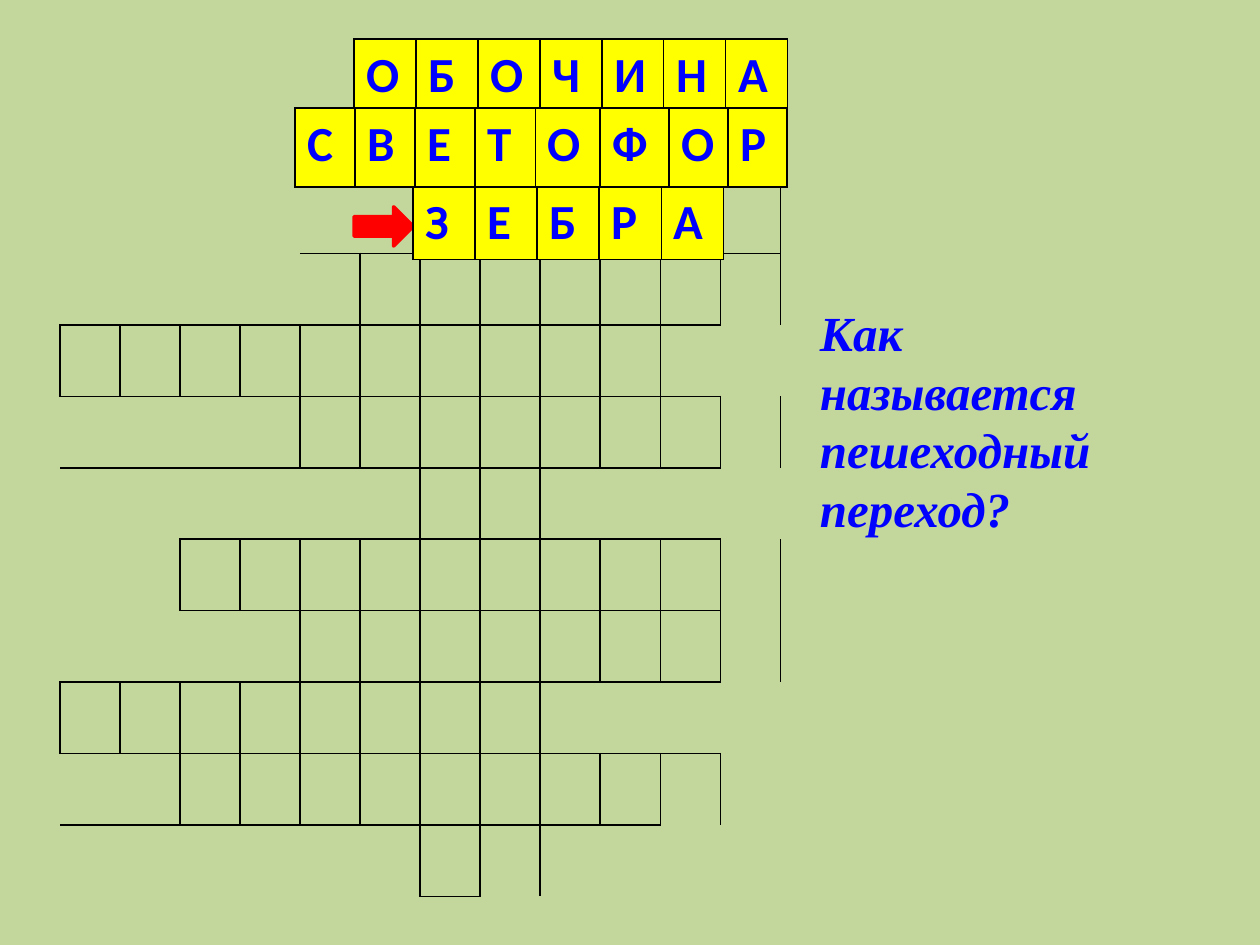
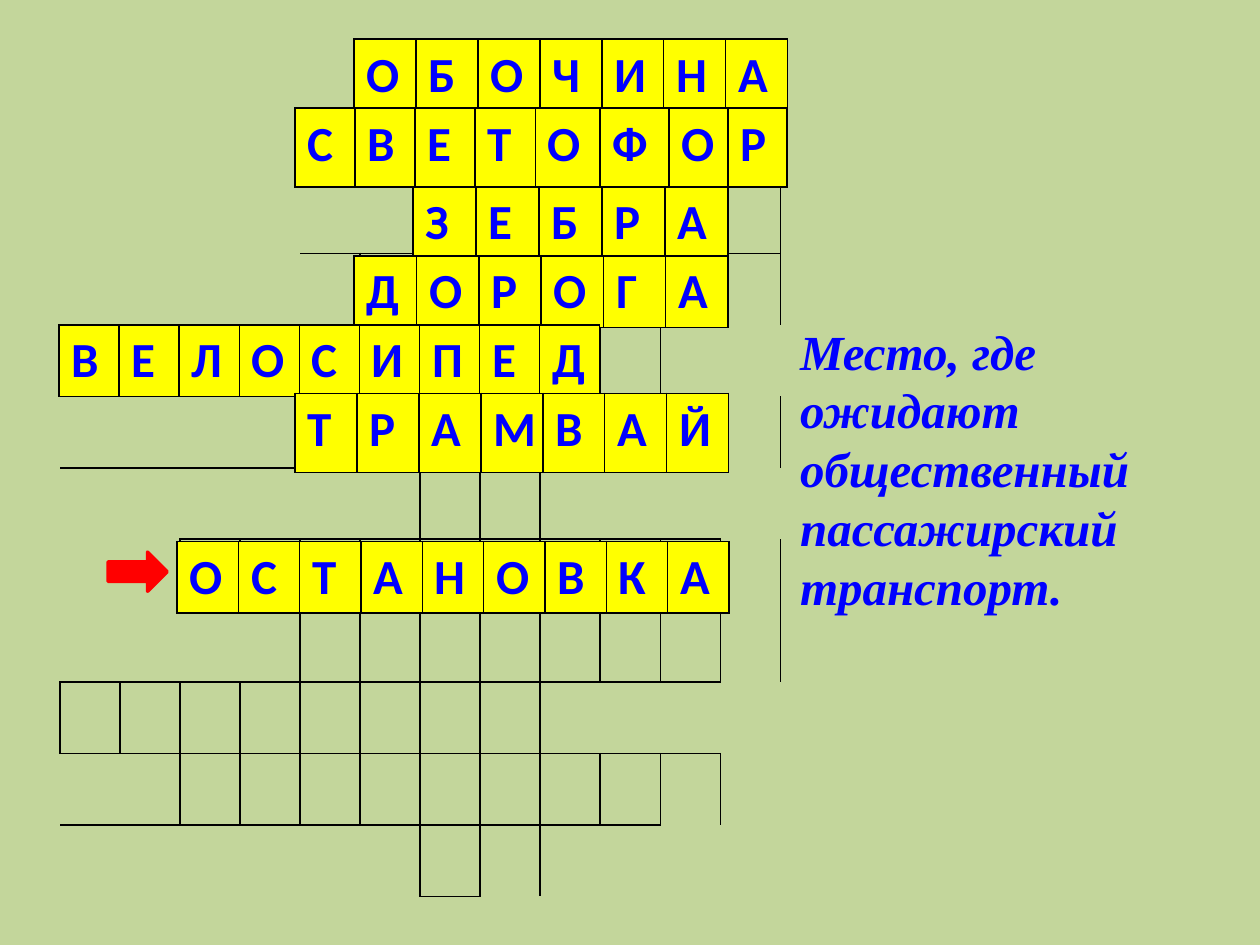
import pptx
import pptx.util
import pptx.dml.color
import pptx.enum.shapes
import pptx.enum.text
import pptx.oxml
import pptx.oxml.ns
from pptx.util import Cm, Pt

# Content: crossword rows as (first column, count of boxes)
GRID = [(6, 7), (5, 8), (7, 5), (6, 6), (1, 9), (5, 7),
        (7, 1), (3, 9), (5, 7), (1, 7), (3, 8), (7, 1)]

# Answers: word, grid row, top, width (or list of widths), height in cm
CURB = ("ОБОЧИНА", 0, 0.79, 8.74, 1.44)
LIGHT = ("СВЕТОФОР", 1, 2.18, [1.21] * 4 + [1.31, 1.39, 1.19, 1.19], 1.59)

SLIDES = [
    {"words": [CURB, LIGHT, ("ЗЕБРА", 2, 3.77, 6.25, 1.44)],
     "arrow": (7.14, 4.17),
     "clue": "Как называется пешеходный переход?",
     "box": (16.28, 5.94, 6.35, 5.05), "anchor": "MIDDLE"},
    {"words": [CURB, LIGHT,
               ("ЗЕБРА", 2, 3.77, 6.35, 1.44),
               ("ДОРОГА", 3, 5.16, 7.54, 1.44),
               ("ВЕЛОСИПЕД", 4, 6.55, 10.9, 1.44),
               ("ТРАМВАЙ", 5, 7.93, 8.74, 1.59),
               ("ОСТАНОВКА", 7, 10.92, 11.13, 1.44)],
     "arrow": (2.18, 11.13),
     "clue": "Место, где ожидают общественный пассажирский транспорт.",
     "box": (15.88, 6.35, 8.13, 6.25), "anchor": "TOP"},
]

# Shared style
GREEN, YELLOW, RED, BLUE, BLACK = "C3D69B", "FFFF00", "FF0000", "0000FF", "000000"
COLS, GRID_COL, GRID_ROW, GRID_TOP = 14, 1.21, 1.44, 0.79
STEP = 1.19  # shift of a word for each grid column
PLAIN = "{2D5ABB26-0587-4C30-8999-92F81FD0307C}"  # no style, no grid
SIDES = {"L": (0, -1), "R": (0, 1), "T": (-1, 0), "B": (1, 0)}


def paint(part, tint):
    part.solid()
    part.fore_color.rgb = pptx.dml.color.RGBColor.from_string(tint)


def style(para, font, ital=False):
    for run in para.runs:
        run.font.name, run.font.size = font, Pt(28)
        run.font.bold, run.font.italic = True, ital
        run.font.color.rgb = pptx.dml.color.RGBColor.from_string(BLUE)


def edge(cell, sides):
    """Draw 1 pt borders; they must come before the cell's fill."""
    props = cell._tc.get_or_add_tcPr()
    for spot, side in enumerate(sides):
        props.insert(spot, pptx.oxml.parse_xml(
            f'<a:ln{side} {pptx.oxml.ns.nsdecls("a")} w="12700"><a:solidFill>'
            f'<a:srgbClr val="{BLACK}"/></a:solidFill></a:ln{side}>'))


def add_table(slide, left, top, widths, heights):
    table = slide.shapes.add_table(
        len(heights), len(widths), Cm(left), Cm(top),
        Cm(sum(widths)), Cm(sum(heights))).table
    table.first_row = table.horz_banding = False
    table._tbl.tblPr.find(pptx.oxml.ns.qn("a:tableStyleId")).text = PLAIN
    for col, width in zip(table.columns, widths):
        col.width = Cm(width)
    for row, height in zip(table.rows, heights):
        row.height = Cm(height)
    return table


def boxed(row, col):
    if not 0 <= row < len(GRID):
        return False
    first, count = GRID[row]
    return first <= col < first + count


def add_grid(slide):
    table = add_table(slide, 0, GRID_TOP, [GRID_COL] * COLS,
                      [GRID_ROW] * len(GRID))
    for row in range(len(GRID)):
        for col in range(COLS):
            cell = table.cell(row, col)
            edge(cell, [side for side, (down, right) in SIDES.items()
                        if boxed(row, col) or boxed(row + down, col + right)])
            cell.fill.background()


def add_word(slide, word, row, top, width, height):
    widths = width if isinstance(width, list) else [width / len(word)] * len(word)
    table = add_table(slide, GRID[row][0] * STEP, top, widths, [height])
    for col, sign in enumerate(word):
        cell = table.cell(0, col)
        cell.text_frame.text = sign
        style(cell.text_frame.paragraphs[0], "Calibri")
        edge(cell, SIDES)
        paint(cell.fill, YELLOW)


def add_arrow(slide, left, top):
    arrow = slide.shapes.add_shape(
        pptx.enum.shapes.MSO_SHAPE.RIGHT_ARROW,
        Cm(left), Cm(top), Cm(1.19), Cm(0.79))
    arrow.shadow.inherit = False
    paint(arrow.fill, RED)
    paint(arrow.line.fill, RED)
    arrow.line.width = Pt(2)


def add_clue(slide, text, box, anchor):
    frame = slide.shapes.add_textbox(*map(Cm, box)).text_frame
    frame.word_wrap = True
    frame.auto_size = pptx.enum.text.MSO_AUTO_SIZE.SHAPE_TO_FIT_TEXT
    frame.vertical_anchor = pptx.enum.text.MSO_ANCHOR[anchor]
    frame.text = text
    style(frame.paragraphs[0], "Times New Roman", ital=True)


def main():
    deck = pptx.Presentation()
    deck.slide_width, deck.slide_height = Cm(25.4), Cm(19.05)
    for page in SLIDES:
        slide = deck.slides.add_slide(deck.slide_layouts[6])
        paint(slide.background.fill, GREEN)
        add_grid(slide)
        add_arrow(slide, *page["arrow"])
        for word in page["words"]:
            add_word(slide, *word)
        add_clue(slide, page["clue"], page["box"], page["anchor"])
    deck.save("out.pptx")


if __name__ == "__main__":
    main()
